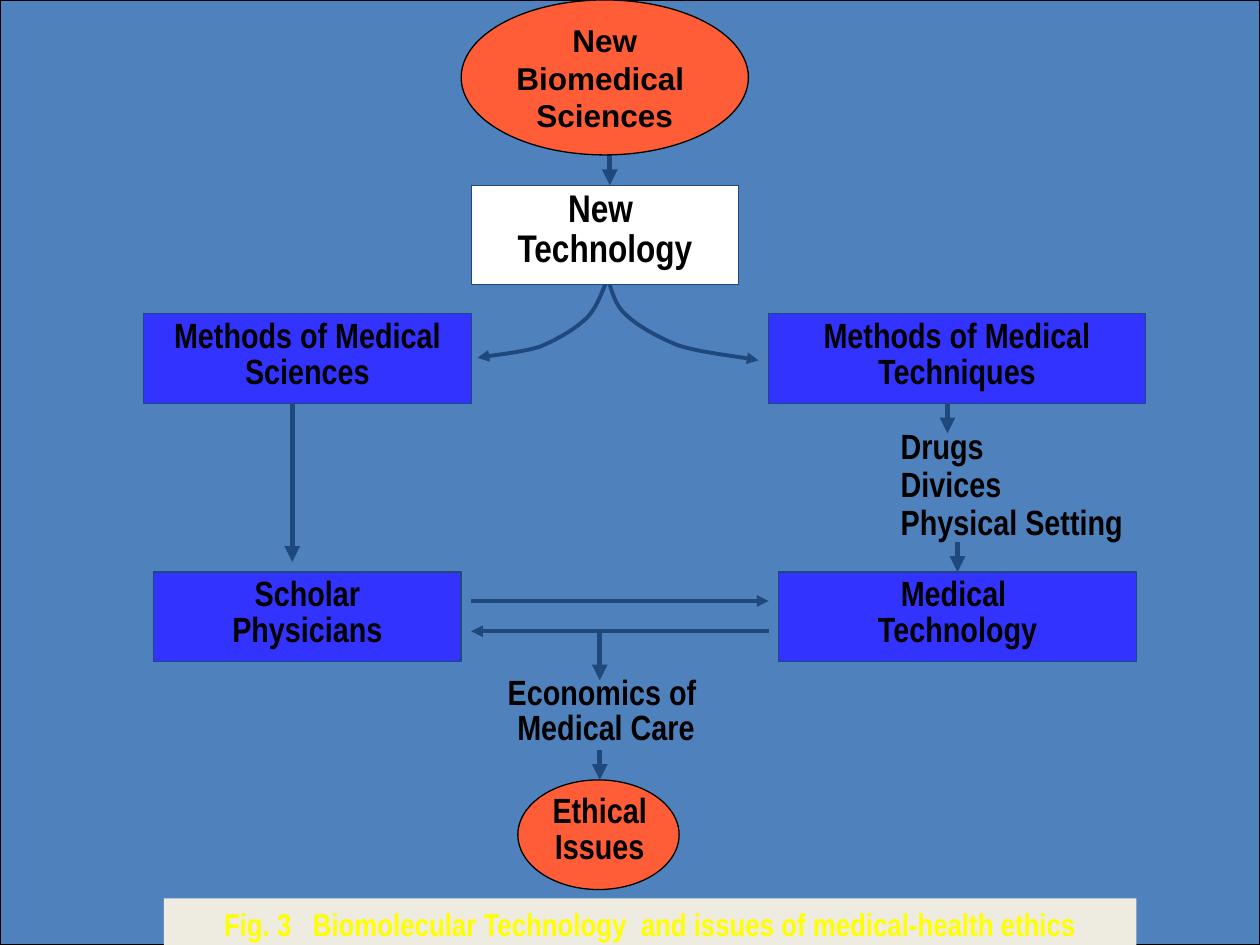
from lxml.etree import SubElement
from pptx import Presentation
from pptx.dml.color import RGBColor
from pptx.enum.shapes import MSO_CONNECTOR, MSO_SHAPE
from pptx.enum.text import MSO_ANCHOR, MSO_AUTO_SIZE, PP_ALIGN
from pptx.oxml.ns import qn
from pptx.util import Inches, Pt

COLORS = {
    "backdrop": "4F81BD",
    "ink": "000000",
    "arrow": "1F497D",
    "science": "FF5D37",
    "method": "3333FF",
    "technology": "FFFFFF",
    "caption": "EEECE1",
    "caption_text": "FFFF00",
}


def rgb(name):
    return RGBColor.from_string(COLORS[name])


def write_text(frame, text, size=20, font="Arial Narrow", color="ink", spacing=0.85,
               align=PP_ALIGN.CENTER, anchor=MSO_ANCHOR.TOP, wrap=True):
    frame.word_wrap = wrap
    frame.vertical_anchor = anchor
    for index, line in enumerate(text.split("\n")):
        paragraph = frame.paragraphs[0] if index == 0 else frame.add_paragraph()
        paragraph.alignment = align
        paragraph.line_spacing = spacing
        run = paragraph.add_run()
        run.text = line
        run.font.size = Pt(size)
        run.font.name = font
        run.font.bold = True
        run.font.color.rgb = rgb(color)


def bezier_points(start, curves, steps=16):
    points = [start]
    for first, second, end in curves:
        origin = points[-1]
        for step in range(1, steps + 1):
            t = step / steps
            weights = ((1 - t) ** 3, 3 * t * (1 - t) ** 2, 3 * t * t * (1 - t), t ** 3)
            points.append(tuple(
                sum(weight * value for weight, value in zip(weights, values))
                for values in zip(origin, first, second, end)))
    return points


class FlowSlide:
    """Holds the diagram style and the slide being drawn."""

    def __init__(self, presentation):
        self.slide = presentation.slides.add_slide(presentation.slide_layouts[6])
        self.shapes = self.slide.shapes

    def box(self, bounds, fill, line="arrow", kind=MSO_SHAPE.RECTANGLE, text=None, **style):
        shape = self.shapes.add_shape(kind, *map(Inches, bounds))
        shape.shadow.inherit = False
        shape.fill.solid()
        shape.fill.fore_color.rgb = rgb(fill)
        if line:
            shape.line.color.rgb = rgb(line)
            shape.line.width = Pt(0.75)
        else:
            shape.line.fill.background()
        if text:
            write_text(shape.text_frame, text, **style)
        return shape

    def label(self, bounds, text, **style):
        write_text(self.shapes.add_textbox(*map(Inches, bounds)).text_frame, text, **style)

    def point_line(self, line, width):
        line.color.rgb = rgb("arrow")
        line.width = Pt(width)
        SubElement(line._get_or_add_ln(), qn("a:tailEnd"), type="triangle")

    def arrow(self, start, end, width=3):
        connector = self.shapes.add_connector(
            MSO_CONNECTOR.STRAIGHT, *map(Inches, start + end))
        self.point_line(connector.line, width)
        SubElement(connector._element.spPr, qn("a:effectLst"))

    def curved_arrow(self, start, curves):
        points = [(Inches(x), Inches(y)) for x, y in bezier_points(start, curves)]
        builder = self.shapes.build_freeform(*points[0])
        builder.add_line_segments(points[1:], close=False)
        branch = builder.convert_to_shape()
        branch.shadow.inherit = False
        branch.fill.background()
        self.point_line(branch.line, 2.25)


def main():
    presentation = Presentation()
    presentation.slide_width = Inches(10)
    presentation.slide_height = Inches(7.5)
    flow = FlowSlide(presentation)

    flow.box((0, 0, 10, 7.5), "backdrop", line="ink")

    for x, top, bottom in [(4.84, 1.15, 1.47), (2.32, 3.2, 4.46), (7.52, 3.2, 3.44),
                           (7.6, 4.3, 4.54), (4.76, 5.01, 5.4), (4.76, 5.95, 6.19)]:
        flow.arrow((x, top), (x, bottom))
    flow.arrow((3.74, 4.77), (6.1, 4.77), width=2.25)
    flow.arrow((6.1, 5.01), (3.74, 5.01), width=2.25)

    flow.curved_arrow((4.81, 2.17), [
        ((4.84, 2.23), (4.86, 2.4), (4.96, 2.49)),
        ((5.05, 2.58), (5.21, 2.67), (5.38, 2.74)),
        ((5.56, 2.8), (5.88, 2.83), (6.02, 2.86))])
    flow.curved_arrow((4.83, 2.2), [
        ((4.8, 2.25), (4.75, 2.43), (4.66, 2.52)),
        ((4.57, 2.61), (4.43, 2.69), (4.29, 2.75)),
        ((4.14, 2.8), (3.89, 2.82), (3.79, 2.84))])

    flow.box((3.66, 0, 2.28, 1.23), "science", line="ink", kind=MSO_SHAPE.OVAL,
             text="New\nBiomedical \nSciences", size=18, font="Arial", spacing=1.0,
             anchor=MSO_ANCHOR.MIDDLE, wrap=False)
    flow.box((3.74, 1.47, 2.12, 0.79), "technology", text="New \nTechnology", size=22)

    for left, top, width, text in [
            (1.14, 2.49, 2.6, "Methods of Medical Sciences"),
            (6.1, 2.49, 2.99, "Methods of Medical Techniques"),
            (1.22, 4.54, 2.44, "Scholar\nPhysicians"),
            (6.18, 4.54, 2.84, "Medical \nTechnology")]:
        flow.box((left, top, width, 0.71), "method", text=text)

    flow.label((7.05, 3.36, 2.52, 0.79), "Drugs\nDivices\nPhysical Setting",
               spacing=0.9, align=PP_ALIGN.LEFT)
    flow.label((3.43, 5.32, 2.76, 0.71), "Economics of \nMedical Care")
    flow.box((4.11, 6.19, 1.28, 0.87), "science", line="ink", kind=MSO_SHAPE.OVAL)
    flow.label((3.58, 6.26, 2.36, 0.65), "Ethical\nIssues")

    caption = flow.box((1.3, 7.13, 7.72, 0.4), "caption", line=None,
                       text="Fig. 3   Biomolecular Technology  and issues of medical-health ethics",
                       size=18, color="caption_text", spacing=1.0)
    caption.text_frame.auto_size = MSO_AUTO_SIZE.SHAPE_TO_FIT_TEXT

    presentation.save("out.pptx")


if __name__ == "__main__":
    main()
